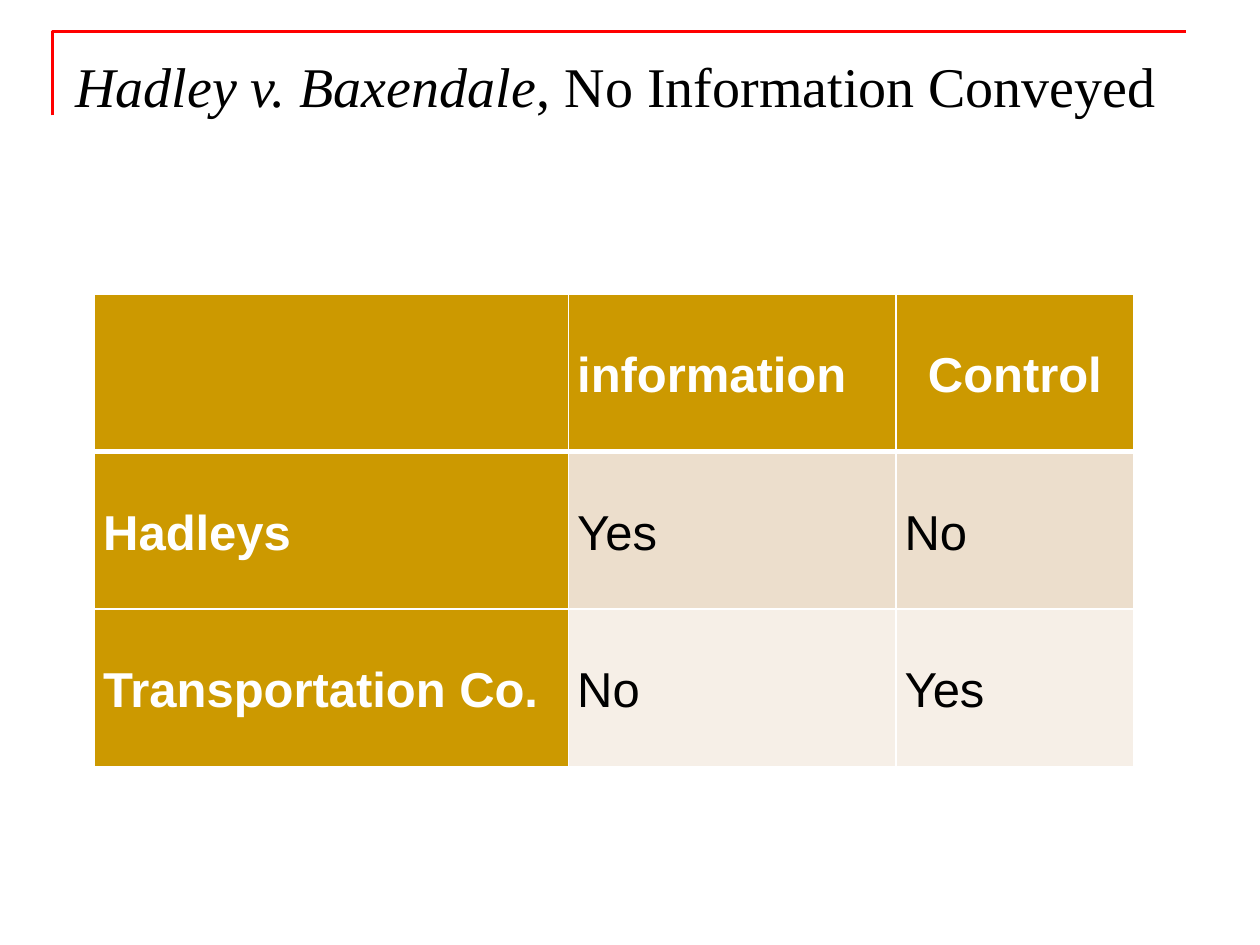
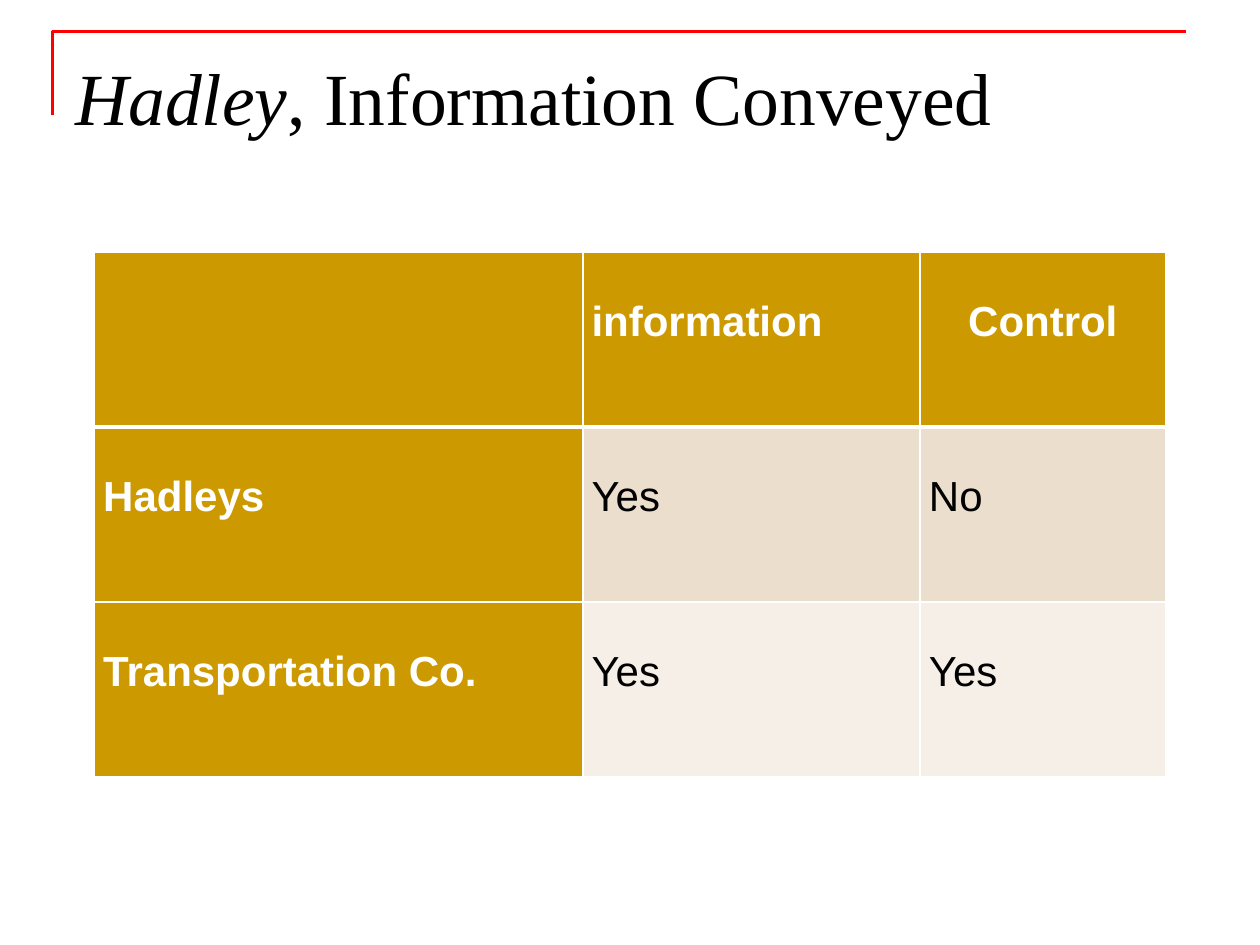
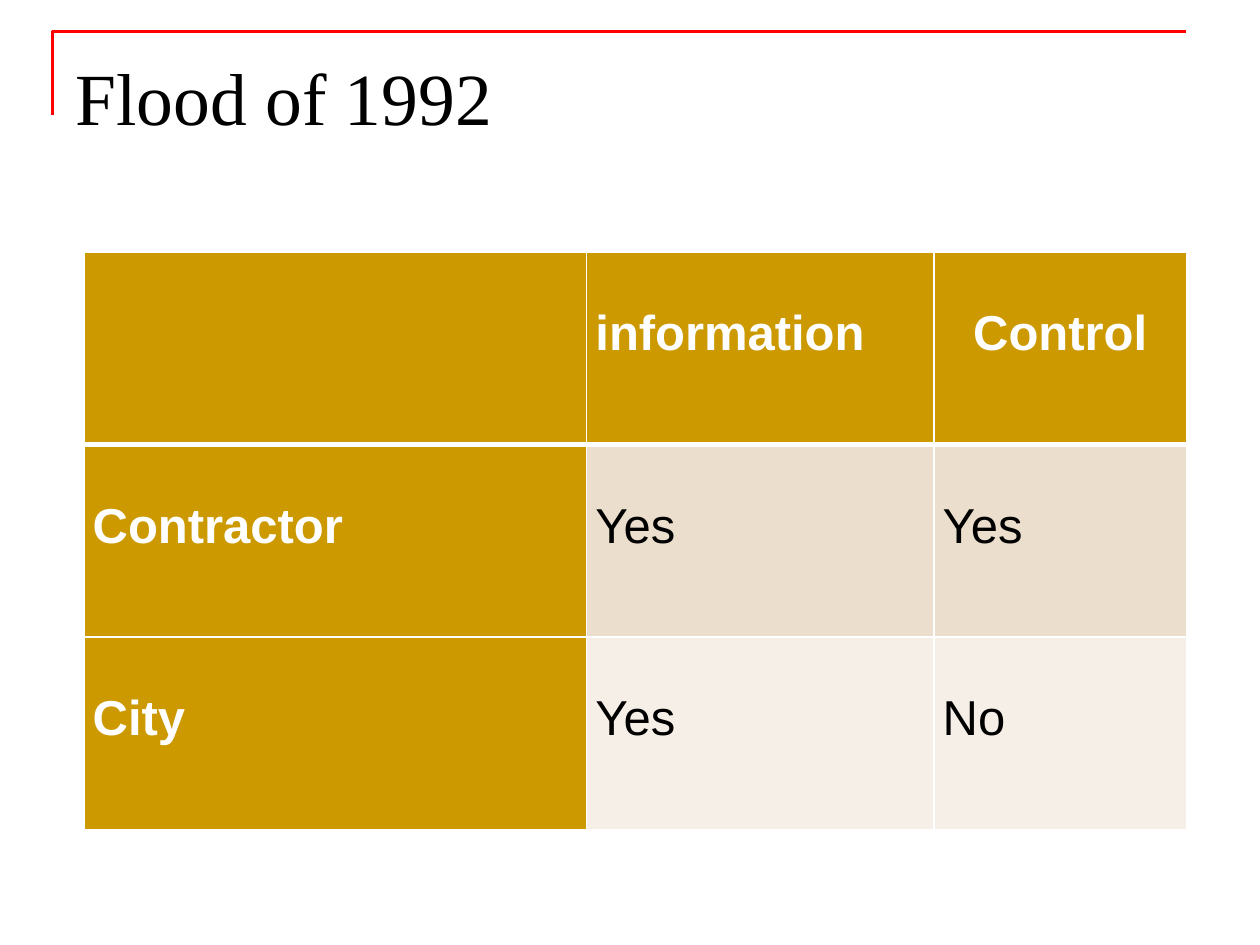
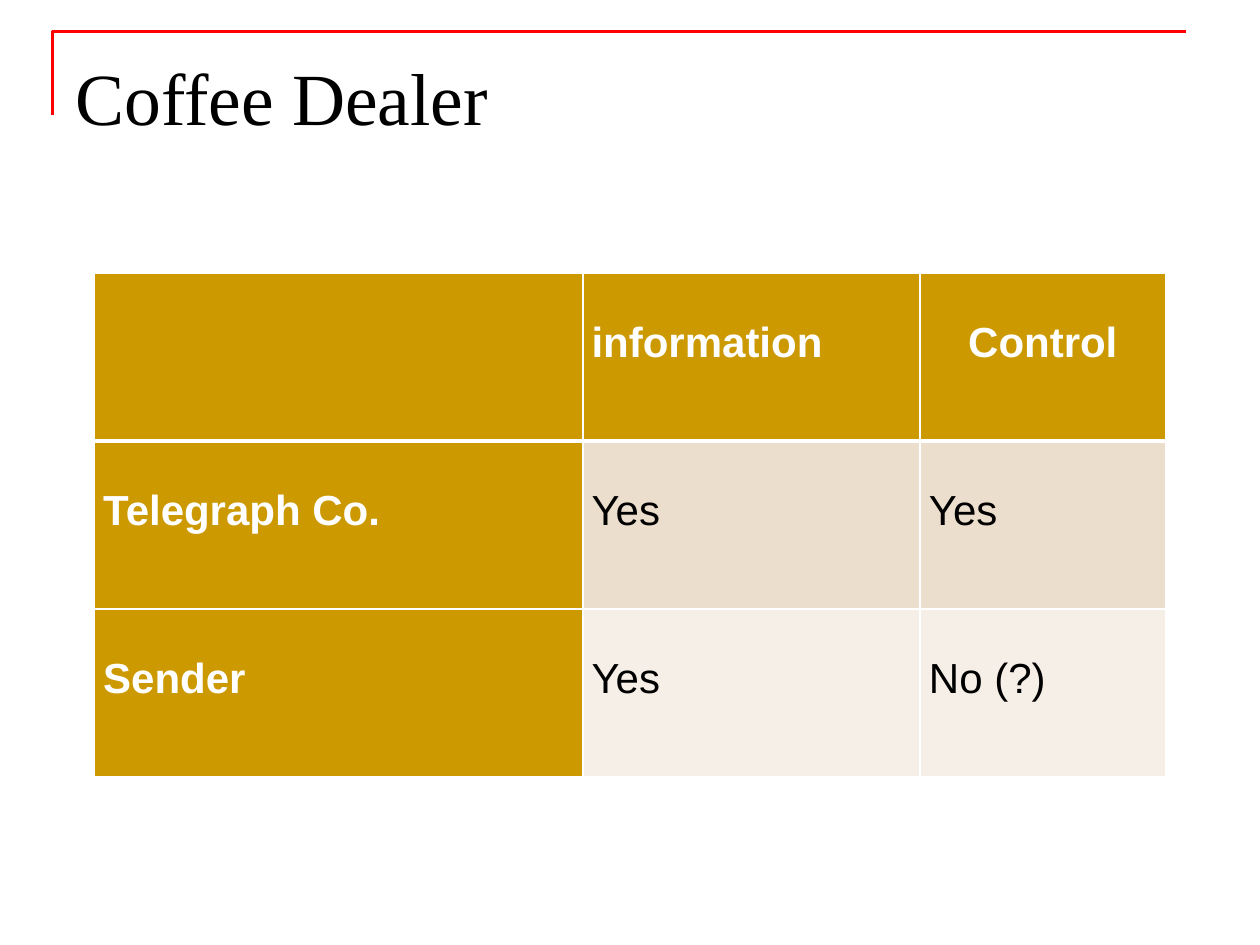
from dataclasses import dataclass

from lxml import etree
from pptx import Presentation
from pptx.dml.color import RGBColor
from pptx.enum.text import MSO_ANCHOR, PP_ALIGN
from pptx.oxml.ns import qn
from pptx.util import Pt

TOP = MSO_ANCHOR.TOP
LEFT, CENTER = PP_ALIGN.LEFT, PP_ALIGN.CENTER


@dataclass(frozen=True)
class Theme:
    frame: str = "FF0000"
    gold: str = "CC9900"
    sand: str = "ECDECC"
    cream: str = "F6EFE7"
    white: str = "FFFFFF"
    black: str = "000000"
    serif: str = "Times New Roman"
    sans: str = "Arial"
    title: int = 42
    small: int = 32
    big: int = 28
    body: int = 24


theme = Theme()


def add_run(para, text, font, size, color, bold=False, italic=False):
    run = para.add_run()
    run.text = text
    run.font.name = font
    run.font.size = Pt(size)
    run.font.color.rgb = RGBColor.from_string(color)
    run.font.bold = bold
    run.font.italic = italic


def add_edge(cell, side, width):
    """Draw a white border on one side (L, R, T or B); call before the fill is set."""
    props = cell._tc.get_or_add_tcPr()
    line = etree.SubElement(props, qn("a:ln" + side), w=str(Pt(width)))
    fill = etree.SubElement(line, qn("a:solidFill"))
    etree.SubElement(fill, qn("a:srgbClr"), val=theme.white)


HEAD = ("", "information", "Control")
SHARES = (0.456, 0.315, 0.229)

# Each case: italic title part, plain title part, title size,
# table box (left, top, width, height), table text size, body rows
CASES = [
    ("Hadley v. Baxendale", ", No Information Conveyed", theme.small,
     (54, 168, 594, 270), theme.big,
     [("Hadleys", "Yes", "No"), ("Transportation Co.", "No", "Yes")]),
    ("Hadley", ", Information Conveyed", theme.title,
     (54, 144, 612, 300), theme.body,
     [("Hadleys", "Yes", "No"), ("Transportation Co.", "Yes", "Yes")]),
    ("", "Flood of 1992", theme.title,
     (48, 144, 630, 330), theme.big,
     [("Contractor", "Yes", "Yes"), ("City", "Yes", "No")]),
    ("", "Coffee Dealer", theme.title,
     (54, 156, 612, 288), theme.body,
     [("Telegraph Co.", "Yes", "Yes"), ("Sender", "Yes", "No (?)")]),
]

deck = Presentation()
deck.slide_width, deck.slide_height = Pt(720), Pt(540)
blank = deck.slide_layouts[6]

for slant, plain, size, box, text_size, body in CASES:
    slide = deck.slides.add_slide(blank)

    # Corner frame
    pen = slide.shapes.build_freeform(Pt(30), Pt(66))
    pen.add_line_segments([(Pt(30), Pt(18)), (Pt(678), Pt(18))], close=False)
    frame = pen.convert_to_shape()
    frame.shadow.inherit = False
    frame.fill.background()
    frame.line.color.rgb = RGBColor.from_string(theme.frame)
    frame.line.width = Pt(1.5)

    # Title
    title = slide.shapes.add_textbox(Pt(36), Pt(21.6), Pt(648), Pt(90)).text_frame
    title.word_wrap = True
    title.vertical_anchor = TOP
    title.margin_top = Pt(8)
    para = title.paragraphs[0]
    if slant:
        add_run(para, slant, theme.serif, size, theme.black, italic=True)
    add_run(para, plain, theme.serif, size, theme.black)

    # Table
    rows = [HEAD, *body]
    left, top, width, height = box
    table = slide.shapes.add_table(
        len(rows), len(HEAD), Pt(left), Pt(top), Pt(width), Pt(height)).table
    for col, share in zip(table.columns, SHARES):
        col.width = Pt(width * share)
    for r, row in enumerate(rows):
        table.rows[r].height = Pt(height / len(rows))
        for c, text in enumerate(row):
            cell = table.cell(r, c)
            label = r == 0 or c == 0
            edges = {"L": 1, "R": 1, "T": 3 if r == 1 else 1, "B": 3 if r == 0 else 1}
            for side, weight in edges.items():
                add_edge(cell, side, weight)
            shade = theme.gold if label else (theme.sand, theme.cream)[r - 1]
            cell.fill.solid()
            cell.fill.fore_color.rgb = RGBColor.from_string(shade)
            cell.vertical_anchor = TOP
            cell.margin_left = cell.margin_right = Pt(5)
            cell.margin_top = cell.margin_bottom = 0
            if text:
                para = cell.text_frame.paragraphs[0]
                para.line_spacing = 2.0
                para.alignment = CENTER if text == "Control" else LEFT
                add_run(para, text, theme.sans, text_size,
                        theme.white if label else theme.black, bold=label)

deck.save("out.pptx")
